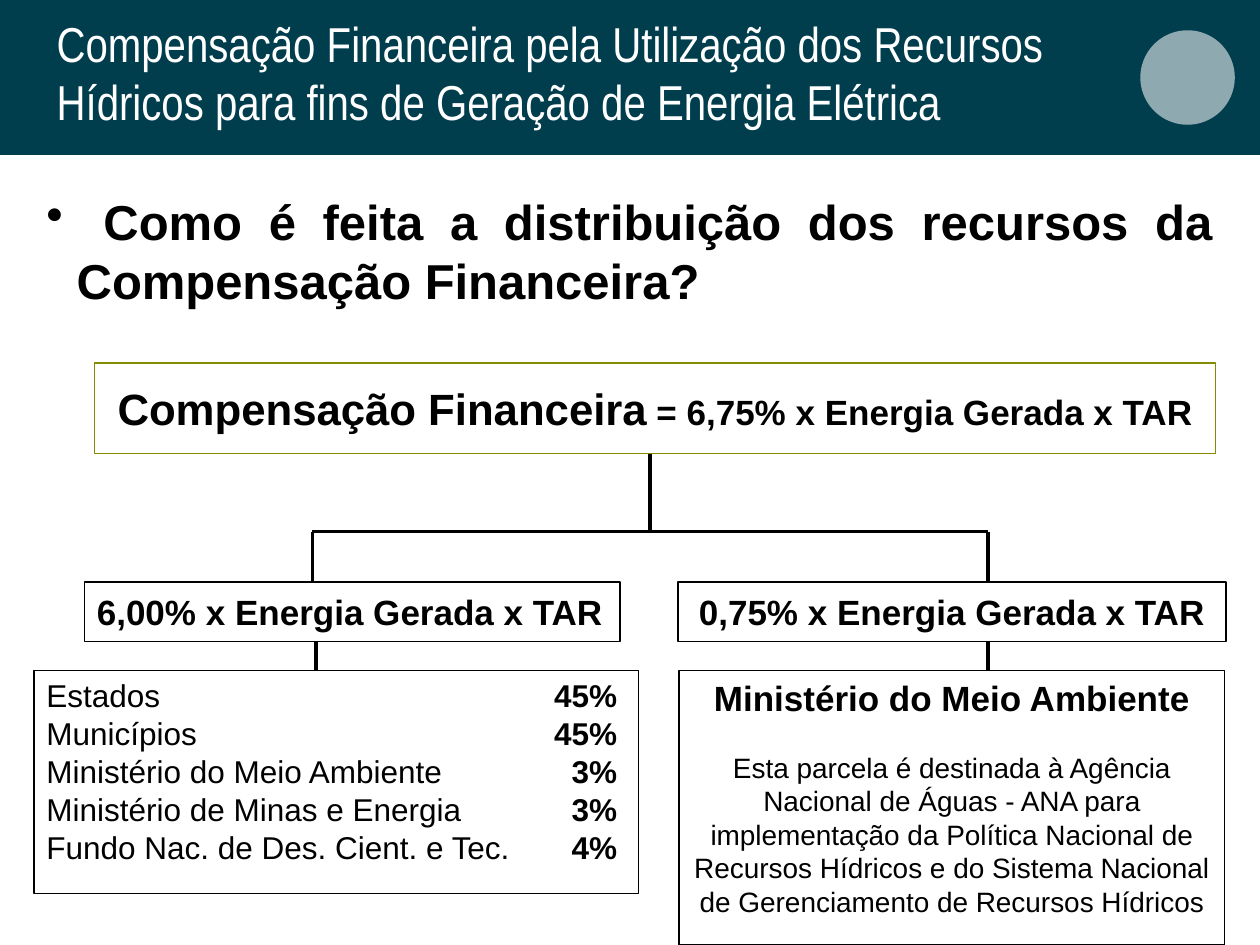
import pptx
import pptx.util
import pptx.dml.color
import pptx.enum.shapes
import pptx.enum.text
from dataclasses import dataclass

Inches = pptx.util.Inches
Pt = pptx.util.Pt
Shape = pptx.enum.shapes.MSO_SHAPE
Align = pptx.enum.text.PP_ALIGN
Anchor = pptx.enum.text.MSO_ANCHOR


@dataclass(frozen=True)
class Theme:
    band: str = "003D4D"
    mark: str = "8FA9B0"
    white: str = "FFFFFF"
    black: str = "000000"
    olive: str = "848B00"
    font: str = "Arial"
    narrow: str = "Arial Narrow"
    head: int = 28
    total: int = 25
    rule: int = 20
    row: int = 18
    note: int = 16
    thin: float = 0.75
    thick: int = 2


def color(code):
    return pptx.dml.color.RGBColor.from_string(code)


def place(shape, area):
    shape.left, shape.top, shape.width, shape.height = map(Inches, area)


class Page:
    def __init__(self, slide, theme):
        self.slide = slide
        self.theme = theme

    def shape(self, kind, area, fill, line=None):
        item = self.slide.shapes.add_shape(kind, *map(Inches, area))
        item.shadow.inherit = False
        item.fill.solid()
        item.fill.fore_color.rgb = color(fill)
        if line:
            item.line.color.rgb = color(line)
            item.line.width = Pt(self.theme.thin)
        else:
            item.line.fill.background()
        return item

    def run(self, para, text, size, bold=False, font=None, ink=None):
        run = para.add_run()
        run.text = text
        run.font.size = Pt(size)
        run.font.bold = bold
        run.font.name = font or self.theme.font
        run.font.color.rgb = color(ink or self.theme.black)

    def title(self, text, area):
        title = self.slide.shapes.title
        title.element.getparent().append(title.element)  # in front of the band
        place(title, area)
        frame = title.text_frame
        frame.auto_size = pptx.enum.text.MSO_AUTO_SIZE.NONE
        frame.vertical_anchor = Anchor.MIDDLE
        para = frame.paragraphs[0]
        para.alignment = Align.LEFT
        self.run(para, text, self.theme.head,
                 font=self.theme.narrow, ink=self.theme.white)

    def bullet(self, text, area, indent):
        frame = self.slide.shapes.add_textbox(*map(Inches, area)).text_frame
        frame.word_wrap = True
        para = frame.paragraphs[0]
        para.alignment = Align.JUSTIFY
        props = para._p.get_or_add_pPr()
        props.set("marL", str(Inches(indent)))
        props.set("indent", str(-Inches(indent)))
        mark = pptx.oxml.parse_xml(
            '<a:buChar xmlns:a="http://schemas.openxmlformats.org/'
            'drawingml/2006/main" char="•"/>')
        props.append(mark)
        self.run(para, text, self.theme.head, bold=True)

    def box(self, area, paras, line=None, align=Align.CENTER,
            anchor=Anchor.MIDDLE, tab=None, gap=0):
        """Each paragraph is a list of (text, size, bold); gap parts them."""
        item = self.shape(Shape.RECTANGLE, area, self.theme.white,
                          line or self.theme.black)
        frame = item.text_frame
        frame.word_wrap = True
        frame.vertical_anchor = anchor
        for index, runs in enumerate(paras):
            para = frame.add_paragraph() if index else frame.paragraphs[0]
            para.alignment = align
            if index and gap:
                para.space_before = Pt(gap)
            if tab:
                self.tab(para, tab)
            for text, size, bold in runs:
                self.run(para, text, size, bold)

    def tab(self, para, at):
        stops = pptx.oxml.parse_xml(
            '<a:tabLst xmlns:a="http://schemas.openxmlformats.org/'
            f'drawingml/2006/main"><a:tab pos="{Inches(at)}" algn="r"/>'
            '</a:tabLst>')
        para._p.get_or_add_pPr().append(stops)

    def line(self, *ends):
        kind = pptx.enum.shapes.MSO_CONNECTOR.STRAIGHT
        item = self.slide.shapes.add_connector(kind, *map(Inches, ends))
        item.line.color.rgb = color(self.theme.black)
        item.line.width = Pt(self.theme.thick)
        props = item._element.spPr
        props.append(props.makeelement(pptx.oxml.ns.qn("a:effectLst"), {}))


def main():
    theme = Theme()
    deck = pptx.Presentation()
    deck.slide_width, deck.slide_height = Inches(10), Inches(7.5)
    page = Page(deck.slides.add_slide(deck.slide_layouts[5]), theme)

    page.shape(Shape.RECTANGLE, (0, 0, 10, 1.23), theme.band)
    page.shape(Shape.OVAL, (9.05, 0.24, 0.75, 0.75), theme.mark)
    page.title("Compensação Financeira pela Utilização dos Recursos Hídricos "
               "para fins de Geração de Energia Elétrica",
               (0.35, 0.05, 8.27, 1.04))
    page.bullet(" Como é feita a distribuição dos recursos da "
                "Compensação Financeira?", (0.27, 1.47, 9.45, 1.03), 0.24)

    left, right, mid, fork = 2.48, 7.84, 5.16, 4.22
    rule_top, rule_high, part_top = 4.62, 0.47, 5.32
    rule_end = rule_top + rule_high
    page.line(mid, 3.59, mid, fork)
    page.line(left, fork, right, fork)
    for x, stub in ((left, 2.51), (right, right)):
        page.line(x, fork, x, rule_top)
        page.line(stub, rule_end, stub, part_top)

    page.box((0.75, 2.88, 8.9, 0.72),
             [[("Compensação Financeira", theme.total, True),
               (" = 6,75% x Energia Gerada x TAR", theme.rule, True)]],
             line=theme.olive)
    for x, width, rate, align in ((0.67, 4.25, "6,00%", Align.LEFT),
                                  (5.38, 4.35, "0,75%", Align.CENTER)):
        page.box((x, rule_top, width, rule_high),
                 [[(f"{rate} x Energia Gerada x TAR", theme.rule, True)]],
                 align=align)

    shares = (("Estados", "45%"),
              ("Municípios", "45%"),
              ("Ministério do Meio Ambiente", "3%"),
              ("Ministério de Minas e Energia", "3%"),
              ("Fundo Nac. de Des. Cient. e Tec.", "4%"))
    page.box((0.27, part_top, 4.8, 1.77),
             [[(name, theme.row, False), ("\t" + share, theme.row, True)]
              for name, share in shares],
             align=Align.LEFT, anchor=Anchor.TOP, tab=4.53)
    page.box((5.39, part_top, 4.33, 2.18),
             [[("Ministério do Meio Ambiente", theme.rule, True)],
              [("Esta parcela é destinada à Agência Nacional de Águas - ANA "
                "para implementação da Política Nacional de Recursos Hídricos "
                "e do Sistema Nacional de Gerenciamento de Recursos Hídricos",
                theme.note, False)]],
             anchor=Anchor.TOP, gap=18)
    deck.save("out.pptx")


if __name__ == "__main__":
    main()
